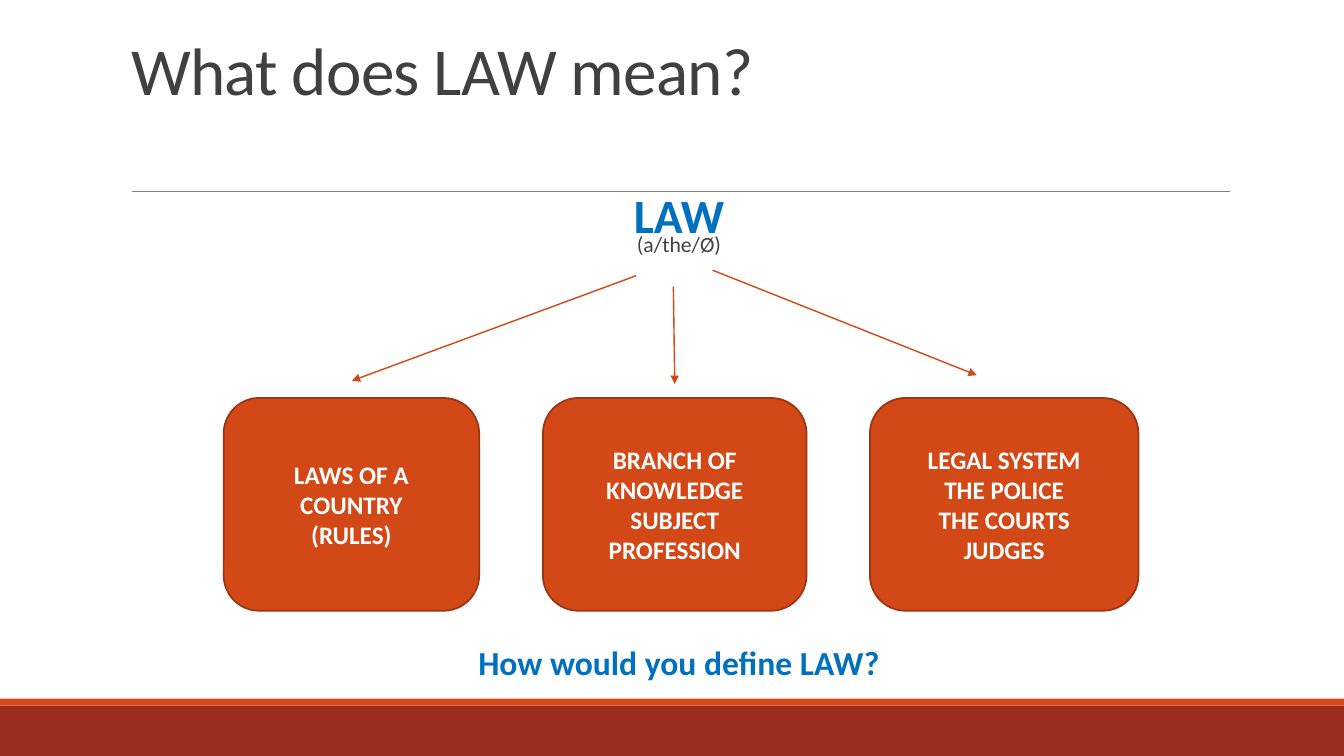
from lxml import etree
from pptx import Presentation, util as u
from pptx.dml.color import RGBColor
from pptx.enum import shapes, text
from pptx.oxml.ns import qn

ORANGE, RUST, EDGE = "D34817", "9B2D1F", "9C3511"
BLUE, DARK, GREY, WHITE = "0070C0", "404040", "808080", "FFFFFF"


def color(code):
    return RGBColor.from_string(code)


class Deck:
    """Hold the font and the current slide, and draw each kind of element."""

    def __init__(self, font):
        self.font = font
        self.file = Presentation()
        self.file.slide_width, self.file.slide_height = u.Pt(960), u.Pt(540)
        self.slide = self.file.slides.add_slide(self.file.slide_layouts[5])

    def letter(self, frame, lines, align=text.PP_ALIGN.CENTER, space=1.0):
        frame.word_wrap = True
        frame.auto_size = text.MSO_AUTO_SIZE.NONE
        for i, (words, size, code, bold) in enumerate(lines):
            para = frame.add_paragraph() if i else frame.paragraphs[0]
            para.text = words
            para.alignment, para.line_spacing = align, space
            font = para.font
            font.name, font.size, font.bold = self.font, u.Pt(size), bold
            font.color.rgb = color(code)

    def title(self, words, left, top, width, height):
        head = self.slide.shapes.title
        head.left, head.top = u.Pt(left), u.Pt(top)
        head.width, head.height = u.Pt(width), u.Pt(height)
        frame = head.text_frame
        frame.vertical_anchor = text.MSO_ANCHOR.TOP
        frame.margin_top = u.Pt(6.5)
        self.letter(frame, [(words, 48, DARK, False)], text.PP_ALIGN.LEFT, 0.85)
        run = frame.paragraphs[0].runs[0]
        run._r.get_or_add_rPr().set("spc", "-50")

    def label(self, lines, left, top, width, height, space=1.0):
        box = self.slide.shapes.add_textbox(*map(u.Pt, (left, top, width, height)))
        frame = box.text_frame
        frame.margin_top = frame.margin_bottom = 0
        self.letter(frame, lines, space=space)

    def block(self, kind, left, top, width, height, fill, edge=None, lines=()):
        item = self.slide.shapes.add_shape(kind, *map(u.Pt, (left, top, width, height)))
        item.shadow.inherit = False
        item.fill.solid()
        item.fill.fore_color.rgb = color(fill)
        if edge:
            item.line.color.rgb = color(edge)
            item.line.width = u.Pt(1.25)
        else:
            item.line.fill.background()
        if lines:
            item.text_frame.vertical_anchor = text.MSO_ANCHOR.MIDDLE
            self.letter(item.text_frame, [(words, 18, WHITE, True) for words in lines])

    def line(self, start, end, code, width, arrow=False):
        link = self.slide.shapes.add_connector(
            shapes.MSO_CONNECTOR.STRAIGHT, *map(u.Pt, (*start, *end)))
        link.line.color.rgb = color(code)
        link.line.width = u.Pt(width)
        if arrow:
            etree.SubElement(link.line._get_or_add_ln(), qn("a:tailEnd"), type="triangle")
        etree.SubElement(link._element.spPr, qn("a:effectLst"))


def main():
    deck = Deck("Calibri")
    rect = shapes.MSO_SHAPE.RECTANGLE
    deck.block(rect, 0, 504, 960, 36, RUST)
    deck.block(rect, 0, 499, 960, 5, ORANGE)
    deck.line((94.3, 136.6), (878.8, 136.6), GREY, 0.5)
    deck.title("What does LAW mean?", 86.4, 22.3, 792, 114.5)
    deck.label([("LAW", 34.1, BLUE, True), ("(a/the/Ø)", 15.5, DARK, False)],
               89, 147.6, 792, 40, 0.59)
    deck.label([("How would you define LAW?", 24, BLUE, True)], 89, 458.6, 792, 32)

    cards = [
        (159.8, 182.5, ["LAWS OF A COUNTRY", "(RULES)"]),
        (387.8, 188.3, ["BRANCH OF KNOWLEDGE", "SUBJECT", "PROFESSION"]),
        (621.4, 191.8, ["LEGAL SYSTEM", "THE POLICE", "THE COURTS", "JUDGES"]),
    ]
    for left, width, lines in cards:
        deck.block(shapes.MSO_SHAPE.ROUNDED_RECTANGLE, left, 284.3, width, 152,
                   ORANGE, EDGE, lines)

    arrows = [
        ((454.3, 197), (251.3, 272)),
        ((481, 204.8), (482, 274.3)),
        ((509, 193), (697.7, 268)),
    ]
    for start, end in arrows:
        deck.line(start, end, ORANGE, 1, True)
    deck.file.save("out.pptx")


if __name__ == "__main__":
    main()
